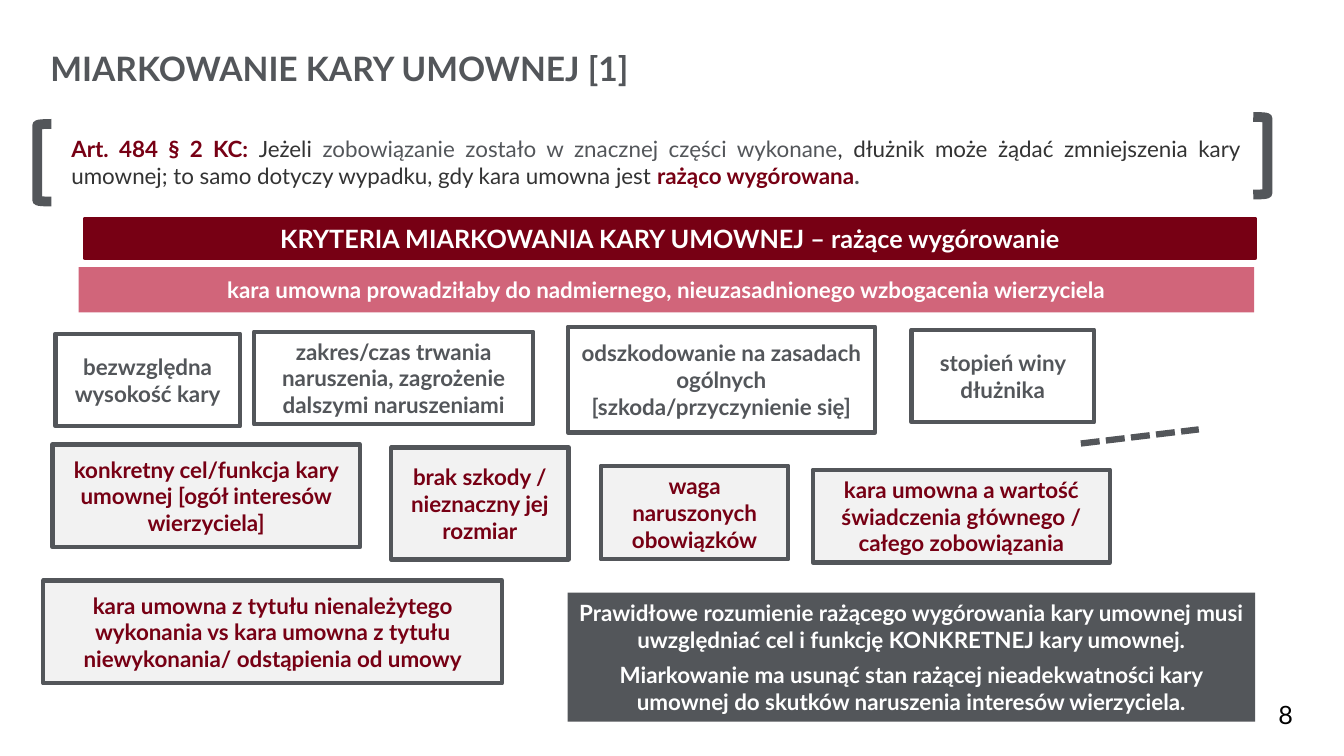
import dataclasses

import lxml.etree
import pptx
import pptx.dml.color
import pptx.enum.dml
import pptx.enum.shapes
import pptx.enum.text
import pptx.oxml.ns
import pptx.util

PX = 9144
SHAPES = pptx.enum.shapes.MSO_SHAPE
ALIGN = pptx.enum.text.PP_ALIGN
ANCHOR = pptx.enum.text.MSO_ANCHOR


@dataclasses.dataclass(frozen=True)
class Theme:
    """Colours, font and type sizes of the slide."""
    font: str = "Lato"
    grey: str = "53565A"
    maroon: str = "770014"
    rose: str = "D1657A"
    pale: str = "F2F2F2"
    ink: str = "333333"
    white: str = "FFFFFF"
    black: str = "000000"
    body: int = 16
    heading: int = 18
    title: int = 24
    border: float = 3
    dash: float = 4.5
    bracket: float = 7


THEME = Theme()


def rgb(value):
    """Return a colour object for a hex value."""
    return pptx.dml.color.RGBColor.from_string(value)


def scaled(lengths):
    """Turn px lengths into EMU."""
    return [length * PX for length in lengths]


def apply(target, values):
    """Set every attribute in the dict of format values."""
    for name, value in values.items():
        setattr(target, name, value)


def write(box, paragraphs, size=THEME.body, frame_format=None, para_format=None):
    """Write paragraphs made of (text, colour, bold) spans."""
    frame = box.text_frame
    apply(frame, {"word_wrap": True, **(frame_format or {})})
    for index, spans in enumerate(paragraphs):
        para = frame.add_paragraph() if index else frame.paragraphs[0]
        apply(para, para_format or {})
        for text, color, bold in spans:
            span = para.add_run()
            span.text = text
            apply(span.font, {"name": THEME.font, "size": pptx.util.Pt(size), "bold": bold})
            span.font.color.rgb = rgb(color)


def add_text(page, at, paragraphs, **options):
    """Add a text box."""
    write(page.shapes.add_textbox(*scaled(at)), paragraphs, **options)


def add_outline(page, kind, at, fill=None, line=None, width=THEME.border):
    """Add a preset shape with an optional fill and border."""
    shape = page.shapes.add_shape(kind, *scaled(at))
    shape.shadow.inherit = False
    if fill:
        shape.fill.solid()
        shape.fill.fore_color.rgb = rgb(fill)
    else:
        shape.fill.background()
    if line:
        shape.line.color.rgb = rgb(line)
        shape.line.width = pptx.util.Pt(width)
    else:
        shape.line.fill.background()
    return shape


def add_panel(page, at, texts, color, fill=None, line=None, size=THEME.body, gap=0):
    """Add a rectangle with bold centred text."""
    box = add_outline(page, SHAPES.RECTANGLE, at, fill, line)
    write(box, [[(text, color, True)] for text in texts], size,
          {"vertical_anchor": ANCHOR.MIDDLE},
          {"alignment": ALIGN.CENTER, "space_after": pptx.util.Pt(gap)})


def add_bracket(page, at, rotation=0):
    """Add a thick square bracket."""
    bracket = add_outline(page, SHAPES.LEFT_BRACKET, at, line=THEME.grey, width=THEME.bracket)
    bracket.rotation = rotation


def add_dashed_line(page, ends):
    """Add a dashed straight line."""
    line = page.shapes.add_connector(pptx.enum.shapes.MSO_CONNECTOR.STRAIGHT, *scaled(ends))
    line.line.color.rgb = rgb(THEME.grey)
    apply(line.line, {"width": pptx.util.Pt(THEME.dash),
                      "dash_style": pptx.enum.dml.MSO_LINE.SQUARE_DOT})
    properties = line._element.find(pptx.oxml.ns.qn("p:spPr"))
    lxml.etree.SubElement(properties, pptx.oxml.ns.qn("a:effectLst"))


def add_statute(page):
    """Add the quoted provision between its brackets."""
    add_text(page, (61, 129, 1179, 64), [[
        ("Art. 484 § 2 KC: ", THEME.maroon, True),
        ("Jeżeli ", THEME.ink, False),
        ("zobowiązanie zostało w znacznej części wykonane", THEME.grey, False),
        (", dłużnik może żądać zmniejszenia kary umownej; to samo dotyczy wypadku, "
         "gdy kara umowna jest ", THEME.ink, False),
        ("rażąco wygórowana", THEME.maroon, True),
        (".", THEME.grey, True),
    ]], para_format={"alignment": ALIGN.JUSTIFY})
    add_bracket(page, (1243, 116, 14, 77), 180)
    add_bracket(page, (37, 123, 14, 77))


def add_criteria(page):
    """Add the general criteria and the highlighted ones."""
    general = [
        ((55, 331, 183, 92), ["bezwzględna wysokość kary"]),
        ((252, 329, 277, 92), ["zakres/czas trwania naruszenia, zagrożenie dalszymi naruszeniami"]),
        ((563, 324, 305, 105), ["odszkodowanie na zasadach ogólnych [szkoda/przyczynienie się]"]),
        ((904, 327, 181, 92), ["stopień winy dłużnika"]),
    ]
    highlighted = [
        ((52, 441, 305, 102), ["konkretny cel/funkcja kary umownej [ogół interesów wierzyciela]"]),
        ((388, 444, 176, 111), ["brak szkody /", "nieznaczny jej rozmiar"]),
        ((596, 462, 186, 93), ["waga naruszonych obowiązków"]),
        ((806, 466, 295, 92), ["kara umowna a wartość świadczenia głównego / całego zobowiązania"]),
        ((43, 576, 455, 102), ["kara umowna z tytułu nienależytego wykonania vs kara umowna "
                               "z tytułu niewykonania/ odstąpienia od umowy"]),
    ]
    for at, texts in general:
        add_panel(page, at, texts, THEME.grey, line=THEME.grey)
    for at, texts in highlighted:
        add_panel(page, at, texts, THEME.maroon, THEME.pale, THEME.grey)


def main():
    """Build and save the slide."""
    deck = pptx.Presentation()
    apply(deck, {"slide_width": 1333 * PX, "slide_height": 750 * PX})
    page = deck.slides.add_slide(deck.slide_layouts[6])
    flush = dict.fromkeys(("margin_left", "margin_top", "margin_right", "margin_bottom"), 0)
    add_text(page, (50, 48, 1058, 40), [[("MIARKOWANIE KARY UMOWNEJ [1]", THEME.grey, True)]],
             size=THEME.title, frame_format=flush)
    add_statute(page)
    add_panel(page, (84, 217, 1161, 39), ["KRYTERIA MIARKOWANIA KARY UMOWNEJ – rażące wygórowanie"],
              THEME.white, THEME.maroon, THEME.maroon, THEME.heading)
    add_panel(page, (78, 265, 1166, 45),
              ["kara umowna prowadziłaby do nadmiernego, nieuzasadnionego wzbogacenia wierzyciela"],
              THEME.white, THEME.rose)
    add_dashed_line(page, (1072, 440, 1189, 426))
    add_criteria(page)
    add_panel(page, (563, 588, 682, 128), [
        "Prawidłowe rozumienie rażącego wygórowania kary umownej musi uwzględniać "
        "cel i funkcję KONKRETNEJ kary umownej.",
        "Miarkowanie ma usunąć stan rażącej nieadekwatności kary umownej do skutków "
        "naruszenia interesów wierzyciela.",
    ], THEME.white, THEME.grey, gap=6)
    add_text(page, (1258, 689, 57, 36), [[("8", THEME.black, False)]], size=THEME.heading)
    deck.save("out.pptx")


if __name__ == "__main__":
    main()
